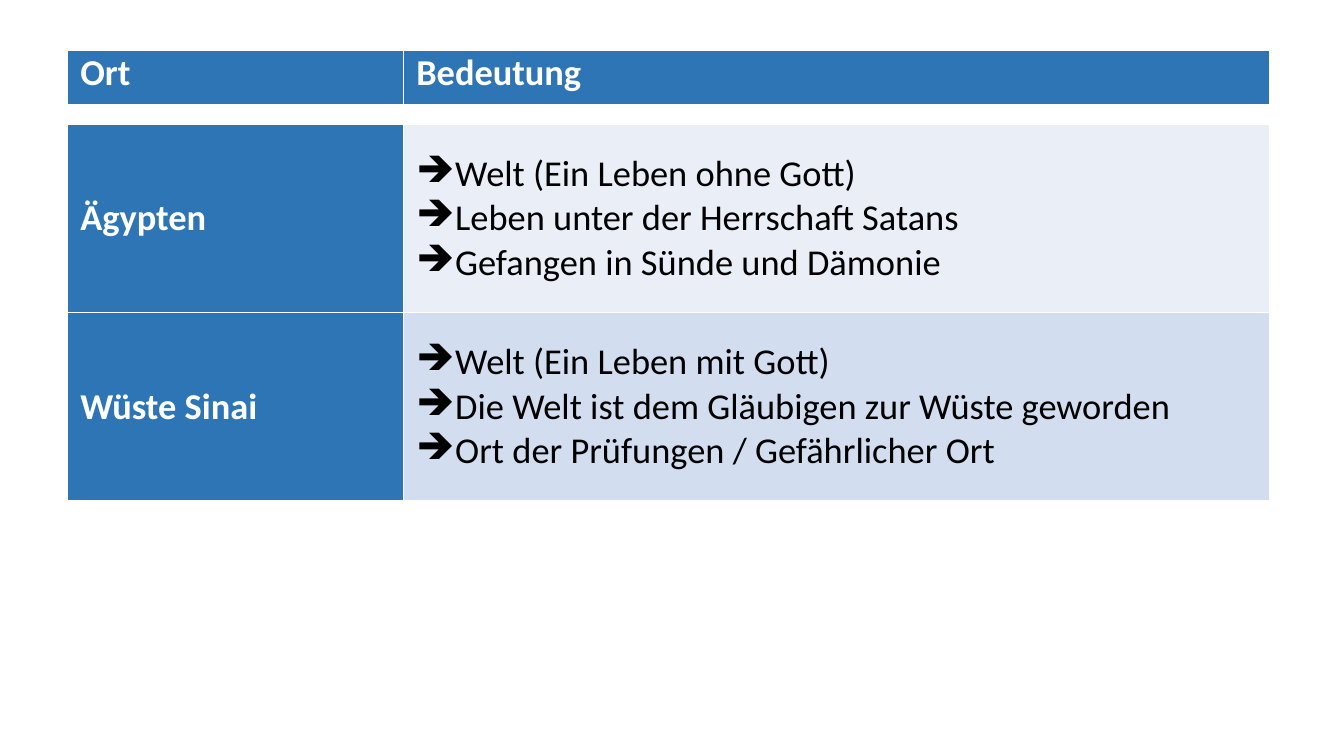
import dataclasses

import lxml.etree
import pptx
import pptx.dml.color
import pptx.enum.text
import pptx.oxml
import pptx.oxml.ns
import pptx.util

Anchor = pptx.enum.text.MSO_ANCHOR
Align = pptx.enum.text.PP_ALIGN
qn = pptx.oxml.ns.qn


@dataclasses.dataclass(frozen=True)
class Theme:
    font: str = "Calibri"
    text_size: int = 26
    gap_size: int = 6
    heading: str = "2E75B6"
    white: str = "FFFFFF"
    black: str = "000000"
    bands: tuple = ("EAEFF7", "D2DEEF")
    thin: int = 1
    thick: int = 3
    bullet: str = "➔"
    indent: float = 0.38
    margin: float = 0.13


HEADINGS = ("Ort", "Bedeutung")
PLACES = (
    ("Ägypten", (
        "Welt (Ein Leben ohne Gott)",
        "Leben unter der Herrschaft Satans",
        "Gefangen in Sünde und Dämonie",
    )),
    ("Wüste Sinai", (
        "Welt (Ein Leben mit Gott)",
        "Die Welt ist dem Gläubigen zur Wüste geworden",
        "Ort der Prüfungen / Gefährlicher Ort",
    )),
)


def write_text(paragraph, text, *, font, size, color, bold=False, align=None):
    """Add one formatted run to a paragraph."""
    run = paragraph.add_run()
    run.text = text
    run.font.name = font
    run.font.size = pptx.util.Pt(size)
    run.font.bold = bold
    run.font.color.rgb = pptx.dml.color.RGBColor.from_string(color)
    paragraph.alignment = align


class SlideBuilder:
    """Holds the theme and the slide, measured in 20 columns by 15 rows."""

    def __init__(self, presentation, theme):
        self.theme = theme
        self.column = presentation.slide_width / 20
        self.row = presentation.slide_height / 15
        self.slide = presentation.slides.add_slide(presentation.slide_layouts[6])

    def table(self, left, top, columns, rows):
        frame = self.slide.shapes.add_table(
            len(rows), len(columns),
            round(left * self.column), round(top * self.row),
            round(sum(columns) * self.column), round(sum(rows) * self.row))
        table = frame.table
        table.horz_banding = False
        for table_column, width in zip(table.columns, columns):
            table_column.width = round(width * self.column)
        for table_row, height in zip(table.rows, rows):
            table_row.height = round(height * self.row)
        return table

    def cell(self, cell, fill, lines=(), *, color=None, bold=False, align=None,
             anchor=Anchor.TOP, bulleted=False, bottom=None):
        theme = self.theme
        cell.fill.solid()
        cell.fill.fore_color.rgb = pptx.dml.color.RGBColor.from_string(fill)
        cell.margin_left = cell.margin_right = pptx.util.Inches(theme.margin)
        cell.margin_top = cell.margin_bottom = 0
        cell.vertical_anchor = anchor
        self.borders(cell, bottom or theme.thin)
        frame = cell.text_frame
        for index, line in enumerate(lines):
            paragraph = frame.add_paragraph() if index else frame.paragraphs[0]
            write_text(paragraph, line, font=theme.font, size=theme.text_size,
                       color=color or theme.white, bold=bold, align=align)
            if bulleted:
                self.bullet(paragraph)
        if not lines:
            # Small type keeps an empty row low
            lxml.etree.SubElement(frame.paragraphs[0]._p, qn("a:endParaRPr"),
                                  sz=str(theme.gap_size * 100))

    def borders(self, cell, bottom):
        properties = cell._tc.get_or_add_tcPr()
        for index, side in enumerate("LRTB"):
            width = bottom if side == "B" else self.theme.thin
            line = pptx.oxml.parse_xml(
                f'<a:ln{side} {pptx.oxml.ns.nsdecls("a")} w="{pptx.util.Pt(width)}">'
                f'<a:solidFill><a:srgbClr val="{self.theme.white}"/></a:solidFill>'
                f'</a:ln{side}>')
            properties.insert(index, line)

    def bullet(self, paragraph):
        properties = paragraph._p.get_or_add_pPr()
        indent = pptx.util.Inches(self.theme.indent)
        properties.set("marL", str(indent))
        properties.set("indent", str(-indent))
        lxml.etree.SubElement(properties, qn("a:buChar"), char=self.theme.bullet)


def main():
    presentation = pptx.Presentation()
    presentation.slide_width = pptx.util.Inches(13.33)
    presentation.slide_height = pptx.util.Inches(7.5)
    theme = Theme()
    builder = SlideBuilder(presentation, theme)
    table = builder.table(1, 1, columns=(5, 12.9), rows=(1.1, 0.36, 3.74, 3.74))

    # Header row and the white gap below it
    for index, heading in enumerate(HEADINGS):
        builder.cell(table.cell(0, index), theme.heading, [heading], bold=True,
                     align=Align.JUSTIFY, bottom=theme.thick)
        builder.cell(table.cell(1, index), theme.white)

    # One row per place, with its meanings as bullets
    for index, (place, meanings) in enumerate(PLACES):
        builder.cell(table.cell(index + 2, 0), theme.heading, [place], bold=True,
                     anchor=Anchor.MIDDLE)
        builder.cell(table.cell(index + 2, 1), theme.bands[index], meanings,
                     color=theme.black, anchor=Anchor.MIDDLE, bulleted=True)

    presentation.save("out.pptx")


if __name__ == "__main__":
    main()
